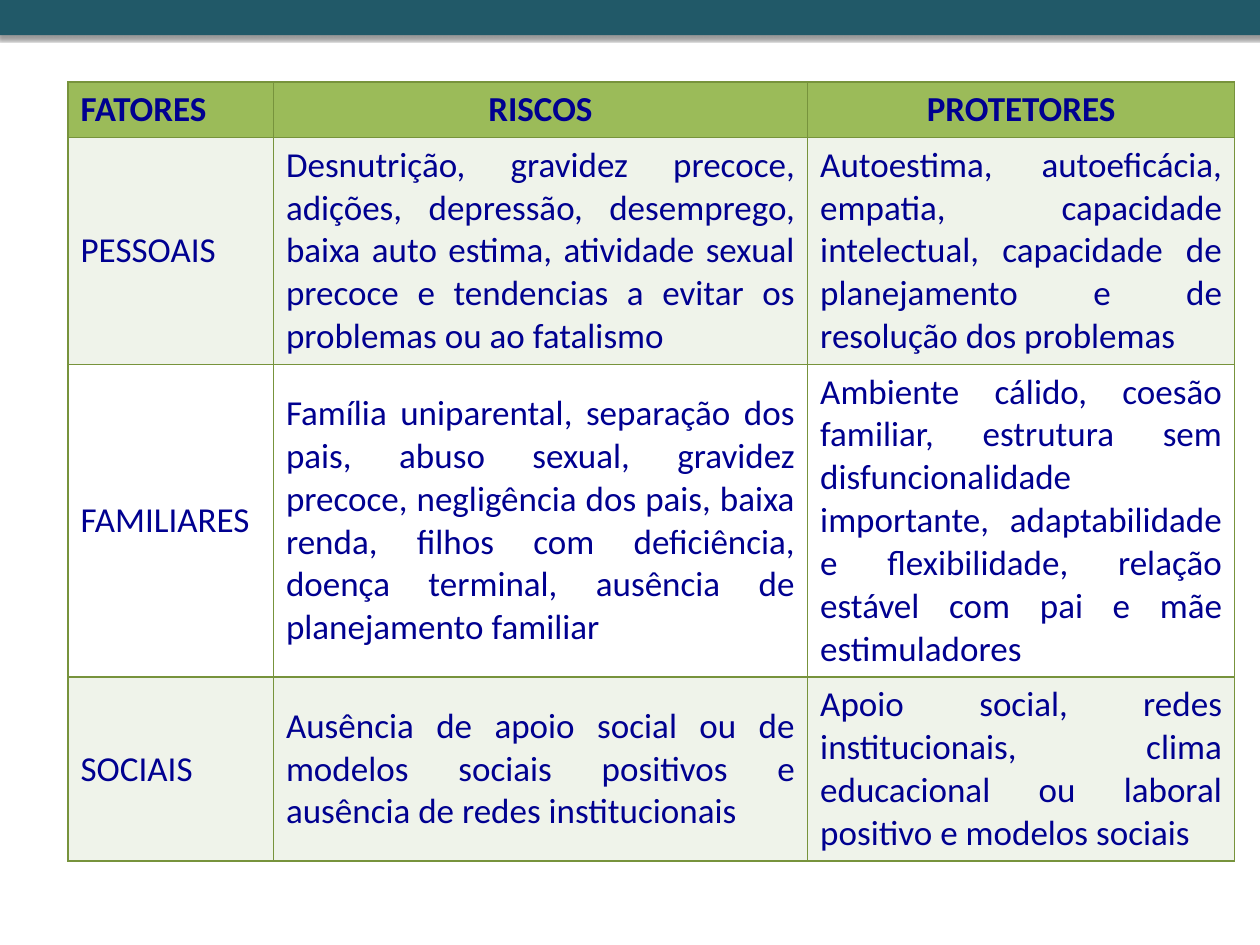
from lxml import etree
from pptx import Presentation
from pptx import util as u
from pptx.dml.color import RGBColor
from pptx.enum import shapes, text
from pptx.oxml import parse_xml
from pptx.oxml.ns import nsdecls, qn

TEAL = RGBColor(0x21, 0x59, 0x68)
NAVY = RGBColor(0x00, 0x00, 0x90)
GREEN = RGBColor(0x9B, 0xBB, 0x59)
OLIVE = RGBColor(0x77, 0x93, 0x3C)
PALE = RGBColor(0xEF, 0xF3, 0xEA)
WHITE = RGBColor(0xFF, 0xFF, 0xFF)

LEFT, MID, BOTH = (text.PP_ALIGN.LEFT, text.PP_ALIGN.CENTER,
                   text.PP_ALIGN.JUSTIFY)
COLS = [1.63, 4.24, 3.39]
ROWS = [0.44, 1.8, 2.48, 1.46]
FACTORS = [
    ["FATORES", "RISCOS", "PROTETORES"],
    ["PESSOAIS",
     "Desnutrição, gravidez precoce, adições, depressão, desemprego, "
     "baixa auto estima, atividade sexual precoce e tendencias a evitar "
     "os problemas ou ao fatalismo",
     "Autoestima, autoeficácia, empatia, capacidade intelectual, "
     "capacidade de planejamento e de resolução dos problemas"],
    ["FAMILIARES",
     "Família uniparental, separação dos pais, abuso sexual, gravidez "
     "precoce, negligência dos pais, baixa renda, filhos com deficiência, "
     "doença terminal, ausência de planejamento familiar",
     "Ambiente cálido, coesão familiar, estrutura sem disfuncionalidade "
     "importante, adaptabilidade e flexibilidade, relação estável com pai "
     "e mãe estimuladores"],
    ["SOCIAIS",
     "Ausência de apoio social ou de modelos sociais positivos e ausência "
     "de redes institucionais",
     "Apoio social, redes institucionais, clima educacional ou laboral "
     "positivo e modelos sociais"],
]


class Page:
    font = {"name": "Calibri", "size": u.Pt(20)}
    ink = NAVY
    edge = OLIVE

    def __init__(self, slide):
        self.slide = slide

    def bar(self, left, top, wide, high, fill):
        """Add a plain band with a soft shadow below it."""
        box = [u.Inches(n) for n in (left, top, wide, high)]
        band = self.slide.shapes.add_shape(
            shapes.MSO_SHAPE.RECTANGLE, *box)
        band.fill.solid()
        band.fill.fore_color.rgb = fill
        band.line.fill.background()
        band.shadow.inherit = False
        glow = band.element.spPr.find(qn("a:effectLst"))
        glow.append(parse_xml(
            f'<a:outerShdw {nsdecls("a")} blurRad="{u.Pt(2)}" '
            f'dist="{u.Pt(2)}" dir="5400000"><a:srgbClr val="000000">'
            '<a:alpha val="40000"/></a:srgbClr></a:outerShdw>'))

    def grid(self, left, top, cols, rows, words):
        box = [u.Inches(n) for n in (left, top, sum(cols), sum(rows))]
        table = self.slide.shapes.add_table(
            len(rows), len(cols), *box).table
        for col, wide in zip(table.columns, cols):
            col.width = u.Inches(wide)
        for row, high in zip(table.rows, rows):
            row.height = u.Inches(high)
        for r, line in enumerate(words):
            fill = GREEN if r == 0 else PALE if r % 2 else WHITE
            for c, word in enumerate(line):
                align = LEFT if c == 0 else BOTH if r else MID
                self.cell(table.cell(r, c), word, fill, align, r == 0)

    def cell(self, cell, word, fill, align, bold):
        cell.text = word
        cell.vertical_anchor = text.MSO_ANCHOR.MIDDLE
        cell.fill.solid()
        cell.fill.fore_color.rgb = fill
        para = cell.text_frame.paragraphs[0]
        para.alignment = align
        font = para.runs[0].font
        for key, value in {**self.font, "bold": bold}.items():
            setattr(font, key, value)
        font.color.rgb = self.ink
        self.frame(cell)

    def frame(self, cell):
        """Draw the four cell borders, which must precede the fill."""
        props = cell._tc.get_or_add_tcPr()
        for spot, side in enumerate("LRTB"):
            line = etree.Element(qn(f"a:ln{side}"), w=str(u.Pt(1)))
            solid = etree.SubElement(line, qn("a:solidFill"))
            etree.SubElement(solid, qn("a:srgbClr"), val=str(self.edge))
            props.insert(spot, line)


def main():
    deck = Presentation()
    deck.slide_width, deck.slide_height = u.Inches(10), u.Inches(7.5)
    page = Page(deck.slides.add_slide(deck.slide_layouts[6]))
    page.bar(-0.02, 0, 10.04, 0.28, TEAL)
    page.grid(0.54, 0.65, COLS, ROWS, FACTORS)
    deck.save("out.pptx")


if __name__ == "__main__":
    main()
